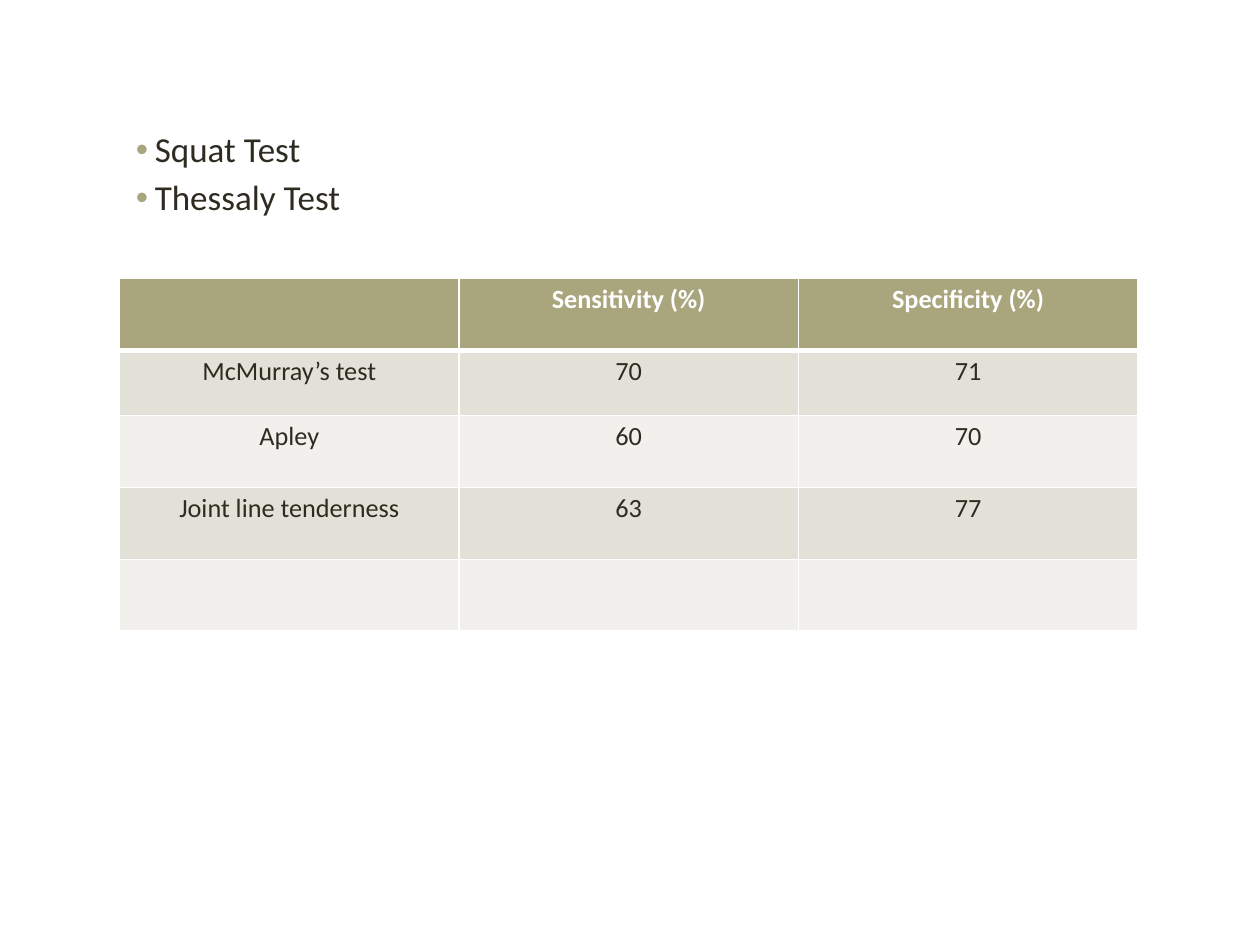
from lxml import etree
from pptx import Presentation
from pptx.dml.color import RGBColor
from pptx.enum.text import PP_ALIGN
from pptx.oxml.ns import qn
from pptx.util import Inches, Pt

CENTER = PP_ALIGN.CENTER
SLIDE_WIDTH, SLIDE_HEIGHT = Inches(10), Inches(7.5)
COLORS = {
    "header": "A9A57C", "odd": "E2E1D7", "even": "F1F0EC",
    "text": "2E2B21", "white": "FFFFFF",
}
TESTS = ["Squat Test", "Thessaly Test"]
ACCURACY = [
    ["", "Sensitivity (%)", "Specificity (%)"],
    ["McMurray’s test", "70", "71"],
    ["Apley", "60", "70"],
    ["Joint line tenderness", "63", "77"],
    ["", "", ""],
]
ROW_HEIGHTS = [0.57, 0.52, 0.57, 0.57, 0.57]


def set_attributes(target, values):
    for name, value in values.items():
        setattr(target, name, value)


def add_run(paragraph, text, size, color, bold=False):
    run = paragraph.add_run()
    run.text = text
    set_attributes(run.font, {"name": "Calibri", "size": Pt(size), "bold": bold})
    run.font.color.rgb = RGBColor.from_string(COLORS[color])


def add_color(parent, color):
    etree.SubElement(parent, qn("a:srgbClr"), val=COLORS[color])


def set_borders(cell, bottom_width):
    properties = cell._tc.get_or_add_tcPr()
    widths = {"a:lnL": 1, "a:lnR": 1, "a:lnT": 1, "a:lnB": bottom_width}
    for position, (tag, width) in enumerate(widths.items()):
        line = etree.Element(qn(tag), w=str(Pt(width)))
        add_color(etree.SubElement(line, qn("a:solidFill")), "white")
        properties.insert(position, line)


def add_bullet(paragraph, color):
    properties = paragraph._p.get_or_add_pPr()
    properties.set("marL", str(Inches(0.29)))
    properties.set("indent", str(Inches(-0.15)))
    add_color(etree.SubElement(properties, qn("a:buClr")), color)
    etree.SubElement(properties, qn("a:buFont"), typeface="Arial")
    etree.SubElement(properties, qn("a:buChar"), char="•")


def add_accuracy_table(slide, left, top, width, height):
    table = slide.shapes.add_table(
        len(ACCURACY), len(ACCURACY[0]), left, top, width, height).table
    for row, row_height in zip(table.rows, ROW_HEIGHTS):
        row.height = Inches(row_height)
    for row_index, values in enumerate(ACCURACY):
        is_header = row_index == 0
        fill = "header" if is_header else ("even", "odd")[row_index % 2]
        for column_index, value in enumerate(values):
            cell = table.cell(row_index, column_index)
            cell.fill.solid()
            cell.fill.fore_color.rgb = RGBColor.from_string(COLORS[fill])
            set_attributes(cell, {
                "margin_left": Inches(0.09), "margin_right": Inches(0.09),
                "margin_top": Inches(0.04), "margin_bottom": Inches(0.04)})
            # The header is set off by a thicker rule, on both sides of the edge
            set_borders(cell, 3 if is_header else 1)
            if row_index == 1:
                cell._tc.tcPr.find(qn("a:lnT")).set("w", str(Pt(3)))
            if value:
                paragraph = cell.text_frame.paragraphs[0]
                paragraph.alignment = CENTER
                add_run(paragraph, value, 15, "white" if is_header else "text", is_header)


def add_test_list(slide, left, top, width, height):
    frame = slide.shapes.add_textbox(left, top, width, height).text_frame
    frame.word_wrap = True
    for index, test in enumerate(TESTS):
        paragraph = frame.add_paragraph() if index else frame.paragraphs[0]
        set_attributes(paragraph, {
            "line_spacing": 0.9, "space_before": Pt(2), "space_after": Pt(4)})
        add_bullet(paragraph, "header")
        add_run(paragraph, test, 20, "text")


def main():
    presentation = Presentation()
    set_attributes(presentation, {
        "slide_width": SLIDE_WIDTH, "slide_height": SLIDE_HEIGHT})
    slide = presentation.slides.add_slide(presentation.slide_layouts[6])
    # Accuracy of each test
    add_accuracy_table(slide, Inches(0.95), Inches(2.21), Inches(8.08), Inches(2.8))
    # Bulleted tests above the table
    add_test_list(slide, Inches(0.84), Inches(1), Inches(8.33), Inches(2.42))
    presentation.save("out.pptx")


if __name__ == "__main__":
    main()
